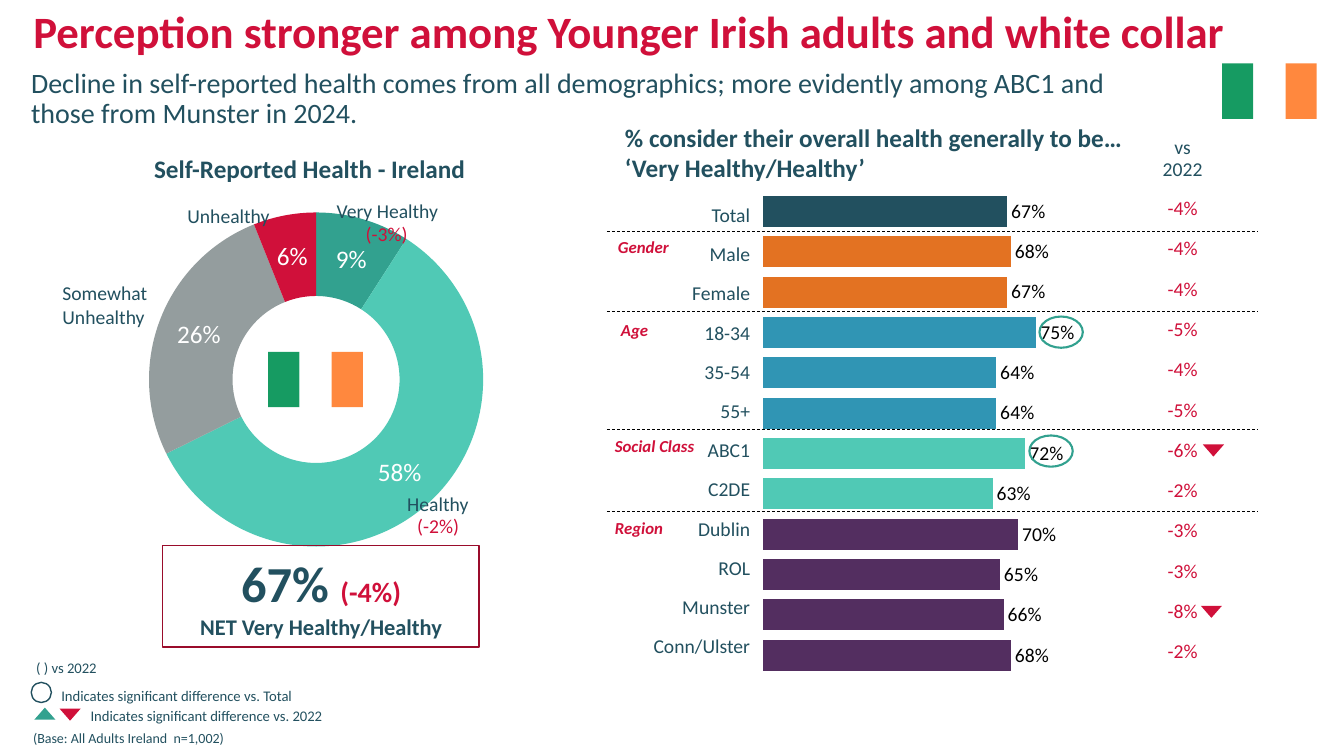
from lxml import etree
from pptx import Presentation
from pptx.chart.data import CategoryChartData
from pptx.dml.color import RGBColor
from pptx.enum.chart import XL_CHART_TYPE as CHART, XL_LABEL_POSITION as LABEL
from pptx.enum.dml import MSO_LINE
from pptx.enum.shapes import MSO_CONNECTOR, MSO_SHAPE as SHAPE
from pptx.enum.text import MSO_ANCHOR as ANCHOR, PP_ALIGN as ALIGN
from pptx.oxml import parse_xml
from pptx.oxml.ns import nsdecls, qn
from pptx.util import Inches, Pt

FONT = "Calibri"
HEX = {
    "navy": "22505F", "red": "D0103A", "dark_red": "9A0C2B", "orange": "E37222",
    "blue": "3095B4", "mint": "50C9B5", "teal": "32A18F", "purple": "532E60",
    "grey": "949D9E", "white": "FFFFFF", "black": "000000",
    "flag_green": "169B62", "flag_orange": "FF883E",
}
RGB = {name: RGBColor.from_string(value) for name, value in HEX.items()}

prs = Presentation()
prs.slide_width, prs.slide_height = Inches(13.33), Inches(7.5)
slide = prs.slides.add_slide(prs.slide_layouts[5])


def add_text(box, text, size, color="navy", bold=False, italic=False, align=ALIGN.LEFT,
             spacing=None, after=0, wrap=True, anchor=ANCHOR.TOP, sp=None):
    sp = sp or slide.shapes.add_textbox(0, 0, 0, 0)
    sp.left, sp.top, sp.width, sp.height = [Inches(v) for v in box]
    tf = sp.text_frame
    tf.text, tf.word_wrap, tf.vertical_anchor = text, wrap, anchor
    for p in tf.paragraphs:
        p.alignment, p.line_spacing, p.space_after = align, spacing, Pt(after)
        for r in p.runs:
            r.font.name, r.font.size, r.font.color.rgb = FONT, Pt(size), RGB[color]
            r.font.bold, r.font.italic = bold, italic
    return tf


def add_shape(kind, box, fill=None, line=None, weight=1, shapes=slide.shapes):
    sp = shapes.add_shape(kind, *[Inches(v) for v in box])
    sp.shadow.inherit = False
    if fill:
        sp.fill.solid()
        sp.fill.fore_color.rgb = RGB[fill]
    else:
        sp.fill.background()
    if line:
        sp.line.color.rgb, sp.line.width = RGB[line], Pt(weight)
    else:
        sp.line.fill.background()
    return sp


# Charts
bar_colors = (["navy"] + ["orange"] * 2 + ["blue"] * 3 + ["mint"] * 2 + ["purple"] * 4)
bar_values = [0.67, 0.68, 0.67, 0.75, 0.64, 0.64, 0.72, 0.63, 0.70, 0.65, 0.66, 0.68]
charts = []
for kind, box, values, colors, size, label_color in [
    (CHART.BAR_CLUSTERED, (7.28, 1.63, 4.36, 5.25), bar_values, bar_colors, 14, "black"),
    (CHART.DOUGHNUT, (1.14, 1.97, 3.99, 3.59), [0.09, 0.58, 0.26, 0.06],
     ["teal", "mint", "grey", "red"], 18, "white"),
]:
    data = CategoryChartData(number_format="0%")
    data.categories = [str(n + 1) for n in range(len(values))]
    data.add_series("Series 1", values)
    chart = slide.shapes.add_chart(kind, *[Inches(v) for v in box], data).chart
    chart.has_legend = chart.has_title = False
    chart.font.name, chart.font.size = FONT, Pt(14)
    plot = chart.plots[0]
    plot.vary_by_categories = kind == CHART.DOUGHNUT
    for i, color in enumerate(colors):
        fill = plot.series[0].points[i].format.fill
        fill.solid()
        fill.fore_color.rgb = RGB[color]
    labels = plot.series[0].data_labels
    labels.show_value = True
    labels.number_format, labels.number_format_is_linked = "0%", False
    labels.font.name, labels.font.size = FONT, Pt(size)
    labels.font.color.rgb = RGB[label_color]
    charts.append(chart)

bars, ring = charts
bars.plots[0].gap_width = 30
bars.plots[0].series[0].data_labels.position = LABEL.OUTSIDE_END
bars.category_axis.reverse_order = True
bars.value_axis.minimum_scale, bars.value_axis.maximum_scale = 0, 0.9
bars.value_axis.has_major_gridlines = False
bars.category_axis.visible = bars.value_axis.visible = False
plot_area = bars._chartSpace.chart.plotArea
for old in plot_area.findall(qn("c:layout")):
    plot_area.remove(old)
plot_area.insert(0, parse_xml(
    f'<c:layout {nsdecls("c")}><c:manualLayout><c:layoutTarget val="inner"/>'
    '<c:xMode val="edge"/><c:yMode val="edge"/><c:x val="0.067"/><c:y val="0.051"/>'
    '<c:w val="0.745"/><c:h val="0.915"/></c:manualLayout></c:layout>'))
ring._chartSpace.find(".//" + qn("c:holeSize")).set("val", "55")

# Headings
add_text((0.23, 0.07, 12.33, 0.53), "Perception stronger among Younger Irish adults and white collar",
         32, "red", True, spacing=0.9, anchor=ANCHOR.MIDDLE, sp=slide.shapes.title)
add_text((0.21, 0.64, 11.53, 0.86),
         "Decline in self-reported health comes from all demographics; more evidently "
         "among ABC1 and those from Munster in 2024.", 20, spacing=0.9)
add_text((1.43, 1.51, 5.49, 0.86), "Self-Reported Health - Ireland", 18, bold=True, spacing=0.9)
add_text((6.1, 1.16, 5.58, 0.71),
         "% consider their overall health generally to be…\n‘Very Healthy/Healthy’", 18, bold=True)
add_text((11.31, 1.32, 0.84, 0.23), "vs\v2022", 14, align=ALIGN.CENTER, spacing=0.9)

# Demographic names and changes beside the bars
groups = ["Total", "Male", "Female", "18-34", "35-54", "55+", "ABC1", "C2DE",
          "Dublin", "ROL", "Munster", "Conn/Ulster"]
changes = [-4, -4, -4, -5, -4, -5, -6, -2, -3, -3, -8, -2]
for box, texts, color, align, margins in [
    ((6.39, 1.94, 1.06, 4.67), groups, "navy", ALIGN.RIGHT, (0.01, 0.01, 0.01, 0)),
    ((11.33, 1.87, 0.8, 4.8), [f"{c}%" for c in changes], "red", ALIGN.CENTER,
     (0.1, 0.05, 0.1, 0.05)),
]:
    table = slide.shapes.add_table(len(texts), 1, *[Inches(v) for v in box]).table
    table.first_row = table.horz_banding = False
    # "No style, no grid" table style
    table._tbl.tblPr.find(qn("a:tableStyleId")).text = "{2D5ABB26-0587-4C30-8999-92F81FD0307C}"
    for i, text in enumerate(texts):
        cell = table.cell(i, 0)
        cell.fill.background()
        cell.vertical_anchor = ANCHOR.MIDDLE
        (cell.margin_left, cell.margin_top,
         cell.margin_right, cell.margin_bottom) = [Inches(m) for m in margins]
        p = cell.text_frame.paragraphs[0]
        p.text, p.alignment = text, align
        font = p.runs[0].font
        font.name, font.size, font.color.rgb = FONT, Pt(14), RGB[color]

# Dashed separators and section names
for y, name, box in [
    (2.3, "Gender", (6.03, 2.3, 0.71, 0.3)),
    (3.09, "Age", (6.06, 3.12, 0.48, 0.3)),
    (4.26, "Social Class", (6, 4.27, 1, 0.3)),
    (5.07, "Region", (6, 5.09, 0.69, 0.3)),
]:
    line = slide.shapes.add_connector(MSO_CONNECTOR.STRAIGHT, Inches(6.02), Inches(y),
                                      Inches(12.47), Inches(y))
    line.line.color.rgb, line.line.width = RGB["black"], Pt(0.5)
    line.line.dash_style = MSO_LINE.DASH
    etree.SubElement(line._element.spPr, qn("a:effectLst"))
    add_text(box, name, 12, "red", True, True, wrap=False)

# Ring labels
for box, text in [
    ((3.24, 1.92, 1.22, 0.34), "Very Healthy"),
    ((3.94, 4.83, 0.82, 0.34), "Healthy"),
    ((1.76, 1.97, 1.03, 0.34), "Unhealthy"),
    ((0.52, 2.74, 1.09, 0.57), "Somewhat\nUnhealthy"),
]:
    add_text(box, text, 14, wrap=False)
for x, y, text in [(3.51, 2.18, "(-3%)"), (4.02, 5.08, "(-2%)")]:
    add_text((x, y, 0.65, 0.34), text, 14, "red", align=ALIGN.CENTER, spacing=0.9)

# Net score box
add_shape(SHAPE.RECTANGLE, (1.61, 5.41, 3.14, 1.01), line="dark_red")
tf = add_text((1.74, 5.43, 2.89, 0.98), "67% \nNET Very Healthy/Healthy", 16, bold=True,
              align=ALIGN.CENTER)
p = tf.paragraphs[0]
p.runs[0].font.size = Pt(36)
r = p.add_run()
r.text = "(-4%)"
r.font.name, r.font.size, r.font.bold = FONT, Pt(20), True
r.font.color.rgb = RGB["red"]

# Irish flags
for left, top in [(12.12, 0.63), (2.66, 3.49)]:
    flag = slide.shapes.add_group_shape()
    for i, color in enumerate(["flag_green", "white", "flag_orange"]):
        add_shape(SHAPE.RECTANGLE, (left + i * 0.315, top, 0.31, 0.55), color, shapes=flag.shapes)

# Significance marks
for x, y in [(10.31, 3.14), (10.21, 4.32)]:
    add_shape(SHAPE.OVAL, (x, y, 0.43, 0.31), line="teal", weight=1.5)
for x, y in [(11.93, 4.41), (11.91, 6.01), (0.59, 7.03)]:
    sp = add_shape(SHAPE.ISOSCELES_TRIANGLE, (x, y, 0.21, 0.12), "red")
    sp._element.spPr.find(qn("a:xfrm")).set("flipV", "1")

# Legend and base
add_shape(SHAPE.ISOSCELES_TRIANGLE, (0.34, 7.02, 0.21, 0.12), "teal")
add_shape(SHAPE.OVAL, (0.31, 6.77, 0.2, 0.2), line="navy")
add_text((0.26, 6.51, 1.8, 0.29), "( ) vs 2022", 10.5, spacing=0.9)
for x, y, year in [(0.51, 6.66, "Total"), (0.8, 6.86, "2022")]:
    add_text((x, y, 2.56, 0.35), f"Indicates significant difference vs. {year}", 10.5,
             spacing=Pt(20), wrap=False)
add_text((0.23, 7.06, 5.37, 0.4), "(Base: All Adults Ireland  n=1,002)", 10, spacing=0.9,
         after=6, anchor=ANCHOR.BOTTOM)

prs.save("out.pptx")
